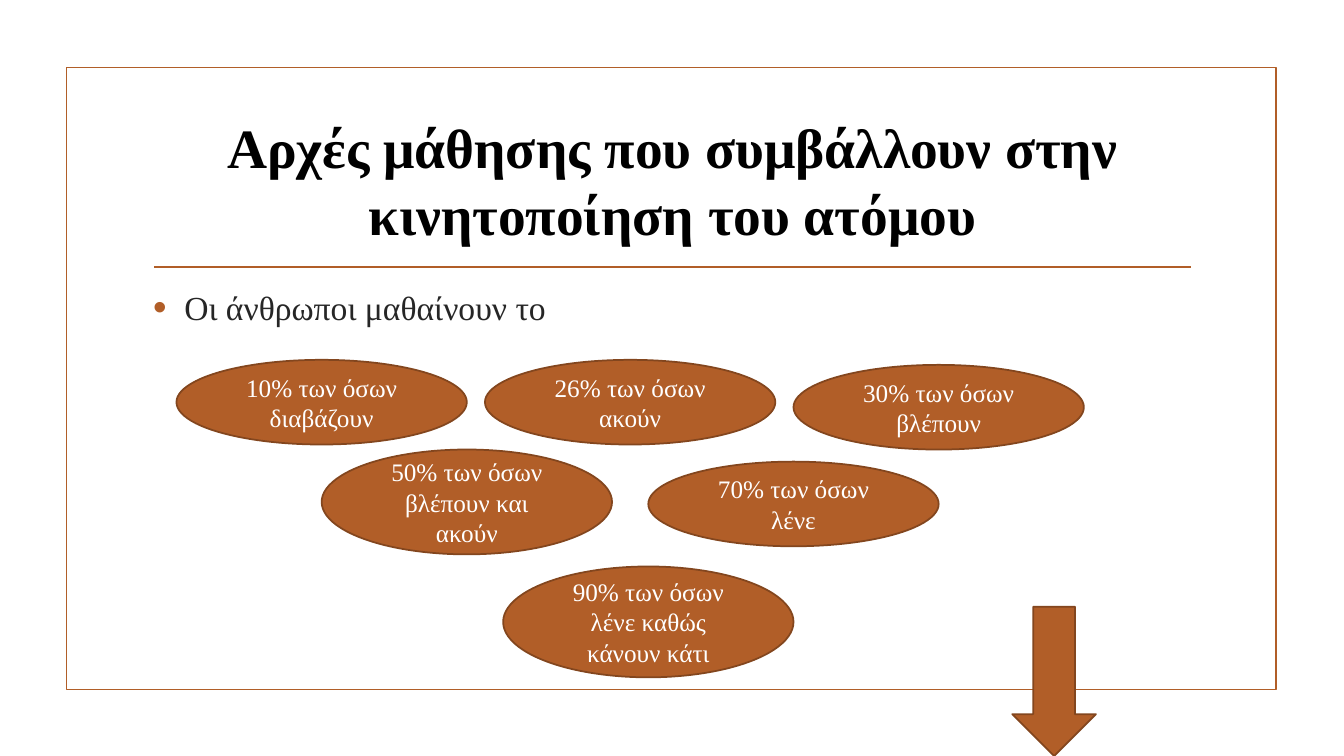
from lxml.etree import SubElement
from pptx import Presentation
from pptx.dml.color import RGBColor
from pptx.enum.shapes import MSO_CONNECTOR, MSO_SHAPE
from pptx.enum.text import MSO_ANCHOR, MSO_AUTO_SIZE, PP_ALIGN
from pptx.oxml.ns import qn
from pptx.util import Inches, Pt

FONT = "Times New Roman"
RUST = RGBColor(0xB1, 0x5E, 0x28)
BROWN = RGBColor(0x83, 0x46, 0x1E)
BLACK = RGBColor(0, 0, 0)
DARK = RGBColor(0x26, 0x26, 0x26)
WHITE = RGBColor(0xFF, 0xFF, 0xFF)

LEFT, WIDTH = 1.42, 10.5     # text column
OVAL_W, OVAL_H = 2.88, 0.84
# Each row: left of first oval, step to the next, [(top, height, text)]
OVAL_ROWS = [
    (1.75, 3.06, [(3.57, OVAL_H, "10% των όσων διαβάζουν"),
                  (3.57, OVAL_H, "26% των όσων ακούν"),
                  (3.62, OVAL_H, "30% των όσων βλέπουν")]),
    (3.19, 3.24, [(4.46, 1.04, "50% των όσων βλέπουν και ακούν"),
                  (4.58, OVAL_H, "70% των όσων λένε")]),
    (4.99, 0, [(5.62, 1.1, "90% των όσων λένε καθώς κάνουν κάτι")]),
]


def set_text(sp, text, size, color, align, anchor, bold=False):
    tf = sp.text_frame
    tf.text = text
    tf.word_wrap = True
    tf.auto_size = MSO_AUTO_SIZE.NONE
    tf.vertical_anchor = anchor
    p = tf.paragraphs[0]
    p.alignment = align
    font = p.runs[0].font
    font.name, font.size, font.bold = FONT, Pt(size), bold
    font.color.rgb = color
    return p


def add_shape(slide, kind, box, line, fill=None):
    sp = slide.shapes.add_shape(kind, *map(Inches, box))
    sp.shadow.inherit = False
    if fill is None:
        sp.fill.background()
    else:
        sp.fill.solid()
        sp.fill.fore_color.rgb = fill
    sp.line.color.rgb = line
    sp.line.width = Pt(1.25)
    return sp


def add_rule(slide, x1, x2, y):
    line = slide.shapes.add_connector(
        MSO_CONNECTOR.STRAIGHT, Inches(x1), Inches(y), Inches(x2), Inches(y))
    line.line.color.rgb = RUST
    line.line.width = Pt(1.25)
    SubElement(line._element.spPr, qn("a:effectLst"))


def add_title(slide, text):
    title = slide.shapes.title
    title.left, title.top = Inches(LEFT), Inches(1.07)
    title.width, title.height = Inches(WIDTH), Inches(1.43)
    set_text(title, text, 39.6, BLACK, PP_ALIGN.CENTER, MSO_ANCHOR.MIDDLE, True)


def add_bullet(slide, text):
    tb = slide.shapes.add_textbox(
        Inches(LEFT), Inches(2.8), Inches(WIDTH), Inches(3.63))
    p = set_text(tb, text, 24, DARK, PP_ALIGN.LEFT, MSO_ANCHOR.TOP)
    pPr = p._p.get_or_add_pPr()
    pPr.set("marL", str(Inches(0.31)))
    pPr.set("indent", str(Inches(-0.31)))
    color = SubElement(pPr, qn("a:buClr"))
    SubElement(color, qn("a:srgbClr"), val=str(RUST))
    SubElement(pPr, qn("a:buSzPct"), val="115000")
    SubElement(pPr, qn("a:buFont"), typeface="Arial")
    SubElement(pPr, qn("a:buChar"), char="•")
    p.space_after = Pt(6)


def add_ovals(slide):
    for left, step, ovals in OVAL_ROWS:
        for i, (top, height, text) in enumerate(ovals):
            box = (left + i * step, top, OVAL_W, height)
            sp = add_shape(slide, MSO_SHAPE.OVAL, box, BROWN, RUST)
            set_text(sp, text, 18, WHITE, PP_ALIGN.CENTER, MSO_ANCHOR.MIDDLE)


def main():
    prs = Presentation()
    prs.slide_width, prs.slide_height = Inches(13.33), Inches(7.5)
    slide = prs.slides.add_slide(prs.slide_layouts.get_by_name("Title Only"))

    # Frame and title rule
    add_shape(slide, MSO_SHAPE.RECTANGLE, (0.66, 0.67, 12, 6.17), RUST)
    add_rule(slide, 1.53, 11.81, 2.65)

    # Title and lead-in
    add_title(slide, "Αρχές μάθησης που συμβάλλουν στην κινητοποίηση του ατόμου")
    add_bullet(slide, "Οι άνθρωποι μαθαίνουν το")

    # Learning rates and arrow
    add_ovals(slide)
    add_shape(slide, MSO_SHAPE.DOWN_ARROW, (10.04, 6.02, 0.83, 1.48), BROWN, RUST)

    prs.save("out.pptx")


if __name__ == "__main__":
    main()
